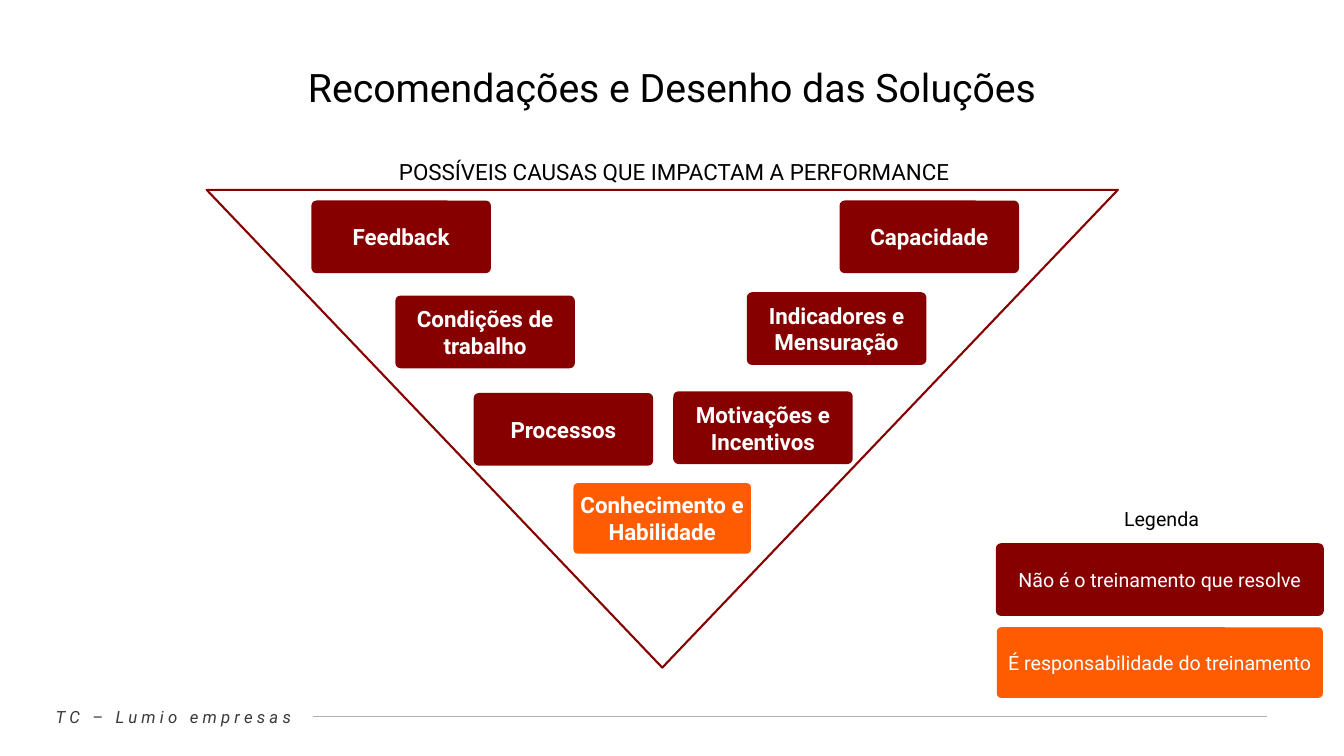
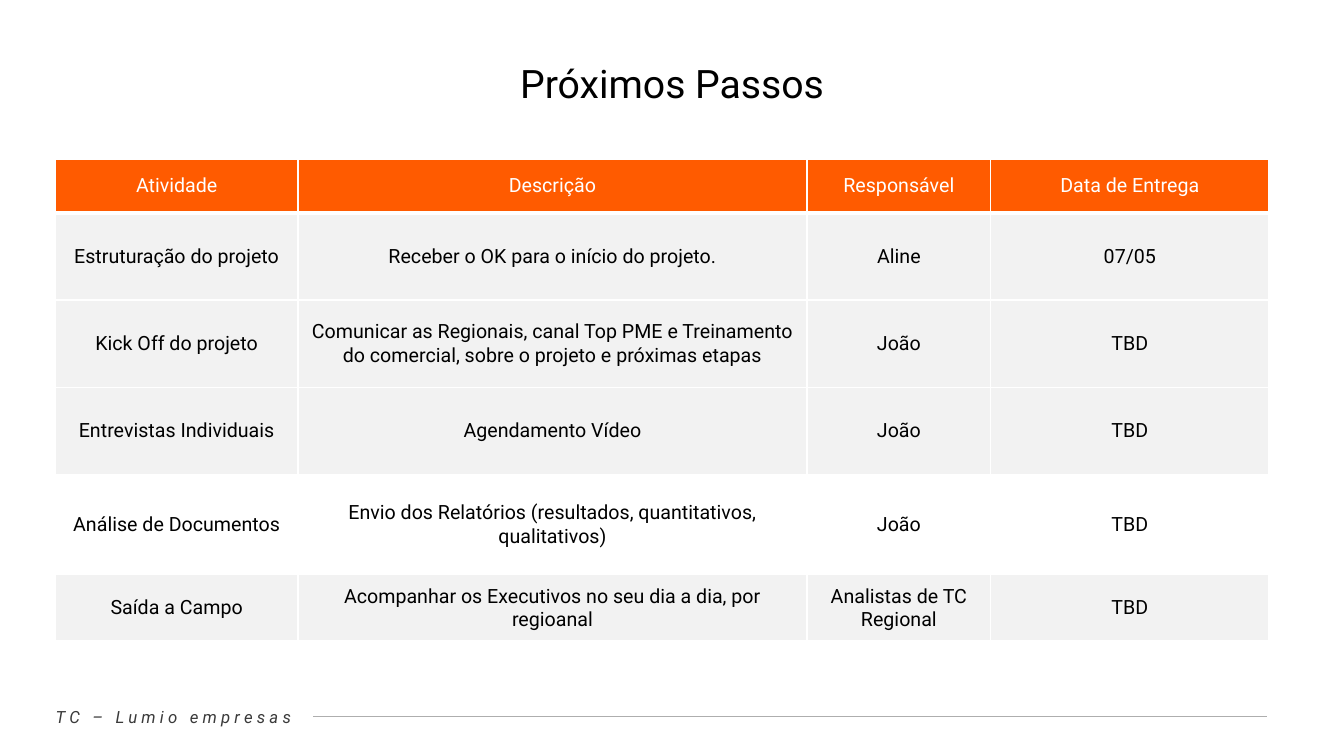
import lxml.etree
import pptx
import pptx.dml.color
import pptx.enum.shapes
import pptx.enum.text
import pptx.oxml.ns
import pptx.util

RGBColor = pptx.dml.color.RGBColor
WINE = RGBColor(0x86, 0x00, 0x00)
ORANGE = RGBColor(0xFF, 0x5B, 0x00)
BLACK = RGBColor(0x00, 0x00, 0x00)
WHITE = RGBColor(0xFF, 0xFF, 0xFF)
PALE = RGBColor(0xF2, 0xF2, 0xF2)
SLATE = RGBColor(0x3A, 0x3A, 0x3A)
SILVER = RGBColor(0xAE, 0xAE, 0xAE)

FONT = "Roboto"
COLS = 40
ROWS = 22.5
SHAPE = pptx.enum.shapes.MSO_SHAPE
ANCHOR = pptx.enum.text.MSO_ANCHOR
qn = pptx.oxml.ns.qn


def write(frame, text, size=14, color=BLACK, bold=False, italic=False,
          space=0, anchor=ANCHOR.TOP):
    frame.word_wrap = True
    frame.vertical_anchor = anchor
    para = frame.paragraphs[0]
    para.alignment = pptx.enum.text.PP_ALIGN.CENTER
    run = para.add_run()
    run.text = text
    font = run.font
    font.name = FONT
    font.size = pptx.util.Pt(size)
    font.color.rgb = color
    font.bold = bold
    font.italic = italic
    if space:
        run._r.get_or_add_rPr().set("spc", str(space * 100))


def edge(cell, side, width):
    line = lxml.etree.SubElement(cell._tc.get_or_add_tcPr(), qn("a:ln" + side))
    line.set("w", str(pptx.util.Pt(width)))
    fill = lxml.etree.SubElement(line, qn("a:solidFill"))
    lxml.etree.SubElement(fill, qn("a:srgbClr")).set("val", str(WHITE))


class Deck:
    def __init__(self):
        self.file = pptx.Presentation()
        self.file.slide_width = pptx.util.Inches(13.333)
        self.file.slide_height = pptx.util.Inches(7.5)
        self.slide = None

    def x(self, cols):
        return round(self.file.slide_width * cols / COLS)

    def y(self, rows):
        return round(self.file.slide_height * rows / ROWS)

    def box(self, left, top, wide, high):
        return self.x(left), self.y(top), self.x(wide), self.y(high)

    def page(self, title, top):
        self.slide = self.file.slides.add_slide(self.file.slide_layouts[5])
        self.label("TC – Lumio empresas", 0.5, 20.88, 9.33, 0.9,
                   size=12, color=SLATE, italic=True, space=3)
        self.rule(9.33, 37.7, 21.33)
        head = self.slide.shapes.title
        head.left, head.top, head.width, head.height = self.box(8, top, 24, 1.7)
        head.text_frame.auto_size = pptx.enum.text.MSO_AUTO_SIZE.NONE
        write(head.text_frame, title, size=28)

    def label(self, text, left, top, wide, high, **style):
        shape = self.slide.shapes.add_textbox(*self.box(left, top, wide, high))
        write(shape.text_frame, text, **style)

    def rule(self, start, end, row):
        line = self.slide.shapes.add_connector(
            pptx.enum.shapes.MSO_CONNECTOR.STRAIGHT,
            self.x(start), self.y(row), self.x(end), self.y(row))
        line.line.color.rgb = SILVER
        line.line.width = pptx.util.Pt(0.5)
        lxml.etree.SubElement(line._element.spPr, qn("a:effectLst"))

    def form(self, kind, adjust, place, fill=None, line=None):
        shape = self.slide.shapes.add_shape(kind, *self.box(*place))
        shape.adjustments[0] = adjust
        shape.shadow.inherit = False
        if fill is None:
            shape.fill.background()
        else:
            shape.fill.solid()
            shape.fill.fore_color.rgb = fill
        if line is None:
            shape.line.fill.background()
        else:
            shape.line.color.rgb = line
            shape.line.width = pptx.util.Pt(1.5)
        return shape

    def funnel(self, *place):
        self.form(SHAPE.ISOSCELES_TRIANGLE, 0.5, place, line=WINE).rotation = 180

    def card(self, text, left, top, wide=5.28, fill=WINE, **style):
        line = WINE if fill == WINE else None
        shape = self.form(SHAPE.ROUNDED_RECTANGLE, 0.06,
                          (left, top, wide, 2.1), fill, line)
        frame = shape.text_frame
        frame.margin_left = frame.margin_right = pptx.util.Inches(0.05)
        write(frame, text, color=WHITE, anchor=ANCHOR.MIDDLE, **style)

    def table(self, left, top, wides, highs, data, plain):
        place = self.box(left, top, sum(wides), sum(highs))
        grid = self.slide.shapes.add_table(len(highs), len(wides), *place).table
        for col, wide in zip(grid.columns, wides):
            col.width = self.x(wide)
        for row, high in zip(grid.rows, highs):
            row.height = self.y(high)
        for i, line in enumerate(data):
            fill = ORANGE if i == 0 else WHITE if i == plain else PALE
            for j, text in enumerate(line):
                cell = grid.cell(i, j)
                for side in "LRTB":
                    thick = (i, side) in ((0, "B"), (1, "T"))
                    edge(cell, side, 3 if thick else 1)
                cell.fill.solid()
                cell.fill.fore_color.rgb = fill
                write(cell.text_frame, text, color=BLACK if i else WHITE)
                cell.vertical_anchor = ANCHOR.MIDDLE


CAUSES = [
    ("Feedback", 9.3, 6), ("Capacidade", 25.02, 6),
    ("Condições de trabalho", 11.8, 8.83),
    ("Indicadores e Mensuração", 22.26, 8.73),
    ("Processos", 14.13, 11.73), ("Motivações e Incentivos", 20.07, 11.68),
]

STEPS = [
    ("Atividade", "Descrição", "Responsável", "Data de Entrega"),
    ("Estruturação do projeto", "Receber o OK para o início do projeto.",
     "Aline", "07/05"),
    ("Kick Off do projeto",
     "Comunicar as Regionais, canal Top PME e Treinamento do comercial, "
     "sobre o projeto e próximas etapas", "João", "TBD"),
    ("Entrevistas Individuais", "Agendamento Vídeo", "João", "TBD"),
    ("Análise de Documentos",
     "Envio dos Relatórios (resultados, quantitativos, qualitativos)",
     "João", "TBD"),
    ("Saída a Campo", "Acompanhar os Executivos no seu dia a dia, por regioanal",
     "Analistas de TC Regional", "TBD"),
]


def main():
    deck = Deck()
    deck.page("Recomendações e Desenho das Soluções", 1.74)
    deck.funnel(6.15, 5.65, 27.12, 14.22)
    deck.label("POSSÍVEIS CAUSAS QUE IMPACTAM A PERFORMANCE",
               11.3, 4.56, 17.54, 1.1, size=16)
    for text, left, top in CAUSES:
        deck.card(text, left, top, size=16, bold=True)
    deck.card("Conhecimento e Habilidade", 17.07, 14.38, fill=ORANGE,
              size=16, bold=True)
    deck.card("Não é o treinamento que resolve", 29.67, 16.2, 9.7)
    deck.card("É responsabilidade do treinamento", 29.67, 18.67, 9.7, ORANGE)
    deck.label("Legenda", 32.22, 14.94, 4.7, 1)

    deck.page("Próximos Passos", 1.62)
    deck.table(1.65, 4.75, [7.22, 15.15, 5.47, 8.28],
               [1.58, 2.6, 2.6, 2.6, 2.98, 1.97], STEPS, plain=4)
    deck.file.save("out.pptx")


if __name__ == "__main__":
    main()
